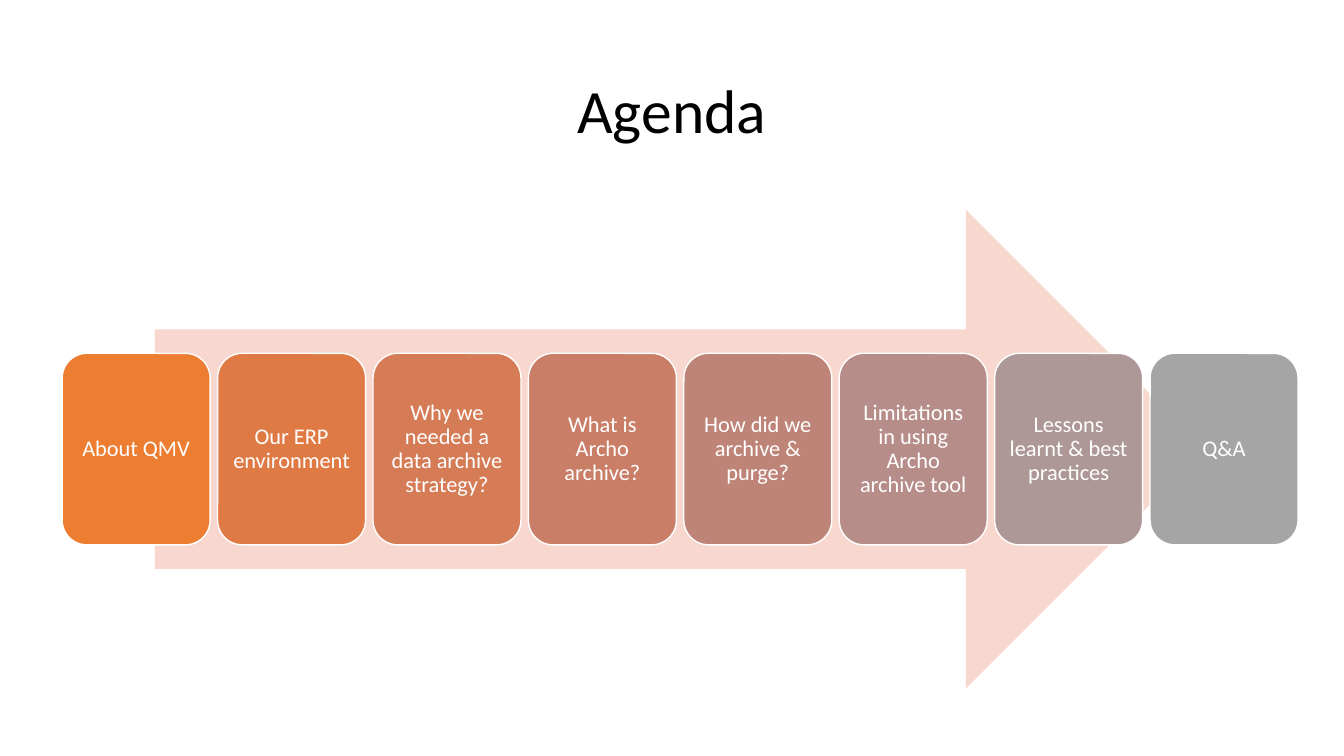
from pptx import Presentation
from pptx.dml.color import RGBColor
from pptx.enum.shapes import MSO_SHAPE
from pptx.enum.text import MSO_ANCHOR, PP_ALIGN
from pptx.util import Pt

COLORS = {"ink": "000000", "white": "FFFFFF", "arrow": "F8D7CE"}
TOPICS = {
    "About QMV": "ED7D31",
    "Our ERP environment": "E07A44",
    "Why we needed a data archive strategy?": "D57B56",
    "What is Archo archive?": "CA7E67",
    "How did we archive & purge?": "BF8478",
    "Limitations in using Archo archive tool": "B68D88",
    "Lessons learnt & best practices": "AD9897",
    "Q&A": "A5A5A5",
}


def rgb(code):
    return RGBColor.from_string(code)


def write(frame, text, size, color):
    """Put one centred run in the middle of a text frame."""
    frame.word_wrap = True
    frame.vertical_anchor = MSO_ANCHOR.MIDDLE
    para = frame.paragraphs[0]
    para.alignment = PP_ALIGN.CENTER
    para.line_spacing = 0.9
    run = para.add_run()
    run.text = text
    run.font.name = "Calibri"
    run.font.size = Pt(size)
    run.font.color.rgb = rgb(color)


def add_shape(shapes, kind, box, fill):
    shape = shapes.add_shape(kind, *map(Pt, box))
    shape.shadow.inherit = False
    shape.fill.solid()
    shape.fill.fore_color.rgb = rgb(fill)
    return shape


def add_title(slide, box, text):
    title = slide.shapes.title
    title.left, title.top, title.width, title.height = map(Pt, box)
    write(title.text_frame, text, 44, COLORS["ink"])


def add_card(shapes, box, text, fill):
    card = add_shape(shapes, MSO_SHAPE.ROUNDED_RECTANGLE, box, fill)
    card.line.color.rgb = rgb(COLORS["white"])
    card.line.width = Pt(1)
    frame = card.text_frame
    frame.margin_left = frame.margin_right = Pt(4.8)
    frame.margin_top = frame.margin_bottom = Pt(4.8)
    write(frame, text, 16, COLORS["white"])


def add_process(slide, box, topics, gap=5.3):
    """Lay a row of topic cards over a wide arrow."""
    left, top, width, height = box
    shapes = slide.shapes.add_group_shape().shapes
    span = width * 0.85
    arrow = add_shape(shapes, MSO_SHAPE.RIGHT_ARROW,
                      (left + (width - span) / 2, top, span, height),
                      COLORS["arrow"])
    arrow.line.fill.background()

    wide = (width - gap * (len(topics) - 1)) / len(topics)
    tall = height * 0.4
    for i, (text, fill) in enumerate(topics.items()):
        place = (left + i * (wide + gap), top + (height - tall) / 2, wide, tall)
        add_card(shapes, place, text, fill)


def main():
    deck = Presentation()
    deck.slide_width, deck.slide_height = Pt(960), Pt(540)
    slide = deck.slides.add_slide(deck.slide_layouts[5])
    add_title(slide, (66, 28.8, 828, 104.4), "Agenda")
    add_process(slide, (44.4, 149.8, 882.8, 342), TOPICS)
    deck.save("out.pptx")


if __name__ == "__main__":
    main()
